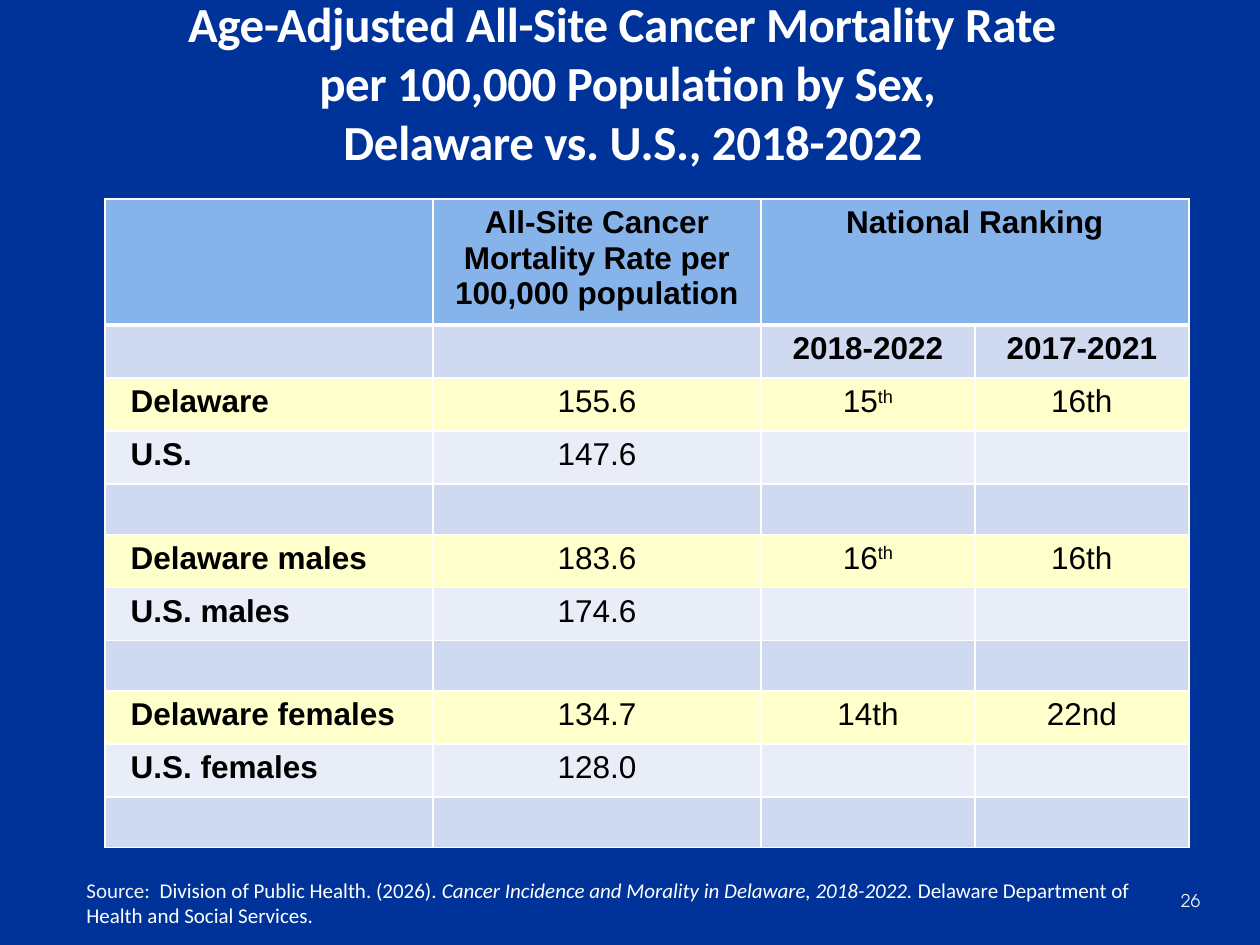
"""Build the slide on cancer mortality rates in Delaware and the U.S."""
import pptx
import pptx.util
import pptx.dml.color
import pptx.enum.text
import pptx.oxml.ns
import lxml.etree

PX = 914400 // 126
HUES = {"back": "003399", "white": "FFFFFF", "pale": "F2F2F2", "black": "000000",
        "head": "86B3EA", "band": "CFD9EF", "state": "FFFFCC", "nation": "E9EDF7"}
ALIGN = pptx.enum.text.PP_ALIGN
MIDDLE = pptx.enum.text.MSO_ANCHOR.MIDDLE


def tint(name):
    return pptx.dml.color.RGBColor.from_string(HUES[name])


def write(para, text, size=18, face="Arial", hue="black", bold=False,
          slant=False, **attrs):
    run = para.add_run()
    run.text = text
    font = run.font
    font.size = pptx.util.Pt(size)
    font.name = face
    font.bold = bold
    font.italic = slant
    font.color.rgb = tint(hue)
    for key, value in attrs.items():
        run._r.get_or_add_rPr().set(key, value)


deck = pptx.Presentation()
deck.slide_width = 1260 * PX
deck.slide_height = 945 * PX
slide = deck.slides.add_slide(deck.slide_layouts[6])
slide.background.fill.solid()
slide.background.fill.fore_color.rgb = tint("back")

title = slide.shapes.add_textbox(0, 34 * PX, 1255 * PX, 96 * PX).text_frame
title.word_wrap = True
title.vertical_anchor = MIDDLE
para = title.paragraphs[0]
para.alignment = ALIGN.CENTER
lines = ["Age-Adjusted All-Site Cancer Mortality Rate ",
         "per 100,000 Population by Sex,", " Delaware vs. U.S., 2018-2022"]
for num, line in enumerate(lines):
    if num:
        para.add_line_break()
    write(para, line, size=28, face="Calibri", hue="white", bold=True, spc="-20")

number = slide.shapes.add_textbox(1177 * PX, 876 * PX, 77 * PX, 50 * PX).text_frame
number.word_wrap = True
number.vertical_anchor = MIDDLE
number.margin_left = 4 * PX
number.margin_right = 6 * PX
write(number.paragraphs[0], "26", size=10, face="TeX Gyre Adventor", hue="pale")

blank = ("band", 48, ["", "", "", ""])
rows = [
    ("head", 118, ["", "All-Site Cancer Mortality Rate per 100,000 population",
                   "National Ranking", ""]),
    ("band", 53, ["", "", "2018-2022", "2017-2021"]),
    ("state", 53, ["Delaware", "155.6", "15^th", "16th"]),
    ("nation", 53, ["U.S.", "147.6", "", ""]),
    blank,
    ("state", 53, ["Delaware males", "183.6", "16^th", "16th"]),
    ("nation", 53, ["U.S. males", "174.6", "", ""]),
    blank,
    ("state", 53, ["Delaware females", "134.7", "14th", "22nd"]),
    ("nation", 53, ["U.S. females", "128.0", "", ""]),
    blank,
]
widths = [328, 328, 214, 214]
high = sum(row[1] for row in rows)
table = slide.shapes.add_table(len(rows), len(widths), 105 * PX, 199 * PX,
                               sum(widths) * PX, high * PX).table
table.first_row = False
table.horz_banding = False
for col, width in zip(table.columns, widths):
    col.width = width * PX
for r, (hue, height, texts) in enumerate(rows):
    table.rows[r].height = height * PX
    for c, text in enumerate(texts):
        cell = table.cell(r, c)
        props = cell._tc.get_or_add_tcPr()
        for side in "LRTB":
            thick = (r, side) in [(0, "B"), (1, "T")]
            edge = lxml.etree.SubElement(props, pptx.oxml.ns.qn("a:ln" + side),
                                         w=str(pptx.util.Pt(3 if thick else 1)))
            fill = lxml.etree.SubElement(edge, pptx.oxml.ns.qn("a:solidFill"))
            lxml.etree.SubElement(fill, pptx.oxml.ns.qn("a:srgbClr"),
                                  val=HUES["white"])
        cell.fill.solid()
        cell.fill.fore_color.rgb = tint(hue)
        if not text:
            continue
        para = cell.text_frame.paragraphs[0]
        if c:
            para.alignment = ALIGN.CENTER
        else:
            para._p.get_or_add_pPr().set("marL", str(13 * PX))
        base, _, raised = text.partition("^")
        write(para, base, bold=r < 2 or c == 0)
        if raised:
            write(para, raised, baseline="30000")
table.cell(0, 2).merge(table.cell(0, 3))

source = slide.shapes.add_textbox(74 * PX, 871 * PX, 1104 * PX, 63 * PX).text_frame
source.word_wrap = True
parts = [("Source:  ", "pale", False),
         ("Division of Public Health. (2026).", "white", False),
         (" Cancer Incidence and Morality in Delaware, 2018-2022. ", "white", True),
         ("Delaware Department of Health and Social Services.", "white", False)]
for text, hue, slant in parts:
    write(source.paragraphs[0], text, size=12, face="Calibri", hue=hue, slant=slant)

deck.save("out.pptx")
